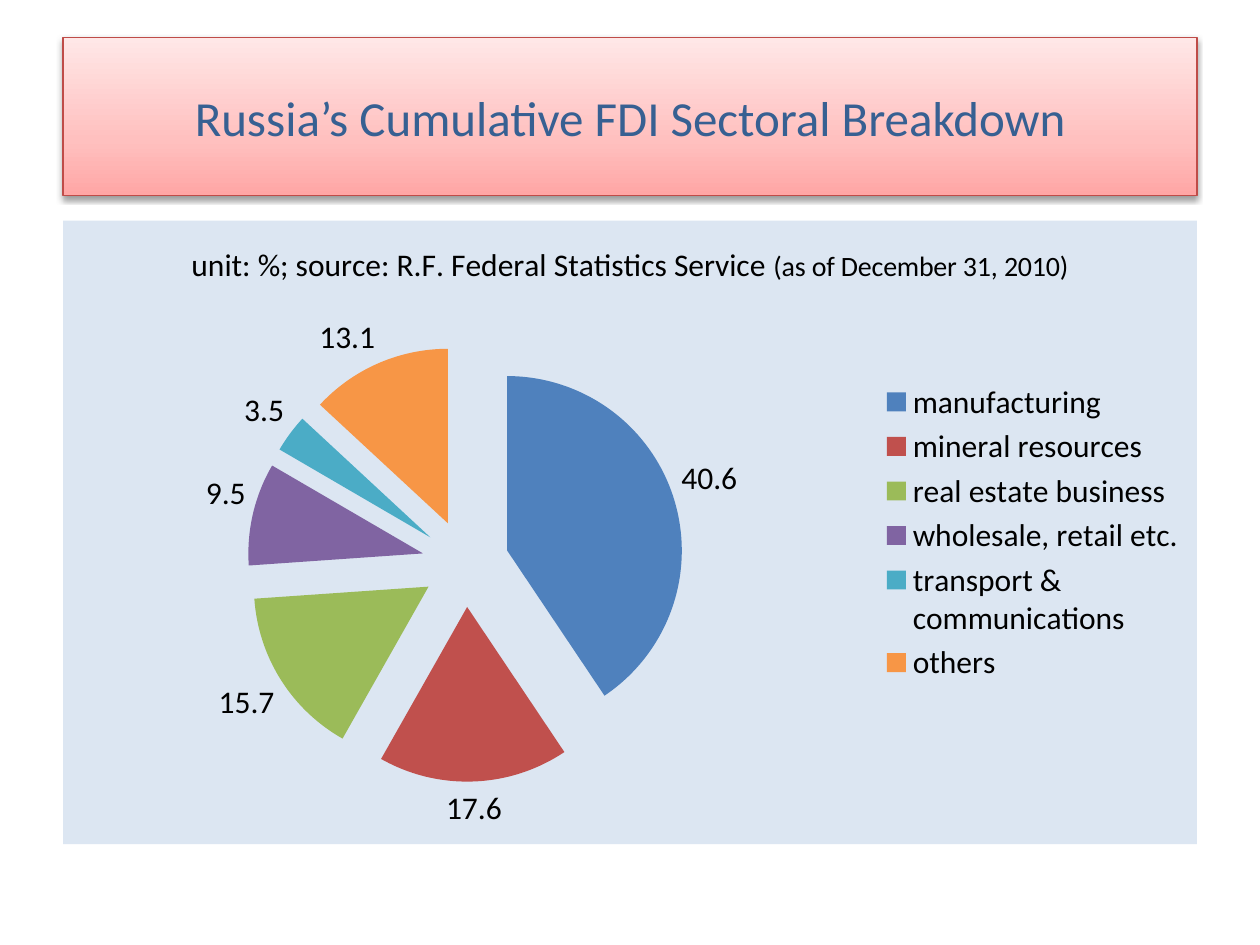
from lxml.etree import SubElement as Sub, Element
from pptx import Presentation
from pptx.chart.data import CategoryChartData as Data
from pptx.dml.color import RGBColor as Rgb
from pptx.enum.chart import XL_CHART_TYPE as Kind, XL_LABEL_POSITION as Spot
from pptx.enum.chart import XL_LEGEND_POSITION as Side
from pptx.enum.shapes import MSO_SHAPE as Form
from pptx.enum.text import MSO_ANCHOR as Anchor, PP_ALIGN as Align
from pptx.oxml import parse_xml
from pptx.oxml.ns import nsdecls, qn
from pptx.util import Inches, Pt

# Content
TITLE = "Russia’s Cumulative FDI Sectoral Breakdown"
NOTE = [("unit: %; source: R.F. Federal Statistics Service ", "body"),
        ("(as of December 31, 2010)", "small")]
SECTORS = [
    ("manufacturing", 40.6, "4F81BD"),
    ("mineral resources", 17.6, "C0504D"),
    ("real estate business", 15.7, "9BBB59"),
    ("wholesale, retail etc.", 9.5, "8064A2"),
    ("transport & communications", 3.5, "4BACC6"),
    ("others", 13.1, "F79646"),
]

# Theme
THEME = {
    "font": "Calibri",
    "size": {"title": 28, "body": 18, "small": 16},
    "title": "376092", "text": "000000", "panel": "DCE6F2", "edge": "BF4C48",
    "fade": [(0, "FFA6A5"), (35, "FFC0BF"), (100, "FFE7E7")],
}

# Layout: shares of the slide, then shares of the chart
WIDE, HIGH = 10, 7.5
BANNER = (0.05, 0.04, 0.9, 1 / 6)
PANEL = (0.05, 0.7 / 3, 0.9, 0.66)
PIE = (0.16, 0.2, 0.39, 0.7)
KEY = (0.72, 0.25, 0.27, 0.5)
BURST = 25


def area(box):
    return [Inches(part * full) for part, full in zip(box, (WIDE, HIGH) * 2)]


def style(font, size, color):
    font.name = THEME["font"]
    font.size = Pt(THEME["size"][size])
    font.bold = False
    font.color.rgb = Rgb.from_string(THEME[color])


def paint(fill, color):
    fill.solid()
    fill.fore_color.rgb = Rgb.from_string(color)


def place(home, box, inner=False):
    """Fix a chart part at shares of the chart's size."""
    for old in home.findall(qn("c:layout")):
        home.remove(old)
    lay = Element(qn("c:layout"))
    man = Sub(lay, qn("c:manualLayout"))
    rows = [("layoutTarget", "inner")] if inner else []
    rows += [("xMode", "edge"), ("yMode", "edge")]
    rows += zip("xywh", box)
    for tag, val in rows:
        Sub(man, qn("c:" + tag), val=str(val))
    home.insert(0 if inner else 1, lay)


def banner(slide):
    box = slide.shapes.add_shape(Form.RECTANGLE, *area(BANNER))
    box.line.color.rgb = Rgb.from_string(THEME["edge"])
    box.line.width = Pt(0.75)
    box.shadow.inherit = False

    # Three-stop fade and soft shadow
    props = box.fill._xPr
    stops = "".join(
        f'<a:gs pos="{pos * 1000}"><a:srgbClr val="{color}"/></a:gs>'
        for pos, color in THEME["fade"])
    props.insert(2, parse_xml(
        f'<a:gradFill {nsdecls("a")} rotWithShape="1"><a:gsLst>{stops}</a:gsLst>'
        '<a:lin ang="16200000" scaled="0"/></a:gradFill>'))
    props.find(qn("a:effectLst")).append(parse_xml(
        f'<a:outerShdw {nsdecls("a")} blurRad="{Pt(3.1)}" dist="{Pt(1.6)}" '
        'dir="5400000" rotWithShape="0"><a:srgbClr val="000000">'
        '<a:alpha val="38000"/></a:srgbClr></a:outerShdw>'))

    frame = box.text_frame
    frame.text = TITLE
    frame.word_wrap = True
    frame.vertical_anchor = Anchor.MIDDLE
    line = frame.paragraphs[0]
    line.alignment = Align.CENTER
    style(line.runs[0].font, "title", "title")


def pie(slide):
    names, vals, colors = zip(*SECTORS)
    data = Data()
    data.categories = names
    data.add_series("Series 1", vals)
    chart = slide.shapes.add_chart(Kind.PIE, *area(PANEL), data).chart
    style(chart.font, "body", "text")

    # Panel behind the chart
    space = chart._chartSpace
    back = parse_xml(
        f'<c:spPr {nsdecls("c", "a")}><a:solidFill><a:srgbClr val="{THEME["panel"]}"/>'
        '</a:solidFill><a:ln><a:noFill/></a:ln></c:spPr>')
    space.find(qn("c:chart")).addnext(back)

    # Heading
    chart.has_title = True
    line = chart.chart_title.text_frame.paragraphs[0]
    for text, size in NOTE:
        run = line.add_run()
        run.text = text
        style(run.font, size, "text")
    chart.chart_title.include_in_layout = False

    # Legend
    chart.has_legend = True
    key = chart.legend
    key.position = Side.RIGHT
    key.include_in_layout = False
    style(key.font, "body", "text")
    place(key._element, KEY)

    # Slices and their values
    plot = chart.plots[0]
    plot.vary_by_categories = True
    place(space.find(".//" + qn("c:plotArea")), PIE, inner=True)
    ring = plot.series[0]
    for i, color in enumerate(colors):
        paint(ring.points[i].format.fill, color)
    burst = Element(qn("c:explosion"), val=str(BURST))
    ring._element.find(qn("c:dPt")).addprevious(burst)
    tags = ring.data_labels
    tags.show_value = True
    tags.show_percentage = False
    tags.position = Spot.OUTSIDE_END
    style(tags.font, "body", "text")


def main():
    deck = Presentation()
    deck.slide_width, deck.slide_height = Inches(WIDE), Inches(HIGH)
    slide = deck.slides.add_slide(deck.slide_layouts[6])
    banner(slide)
    pie(slide)
    deck.save("out.pptx")


if __name__ == "__main__":
    main()
